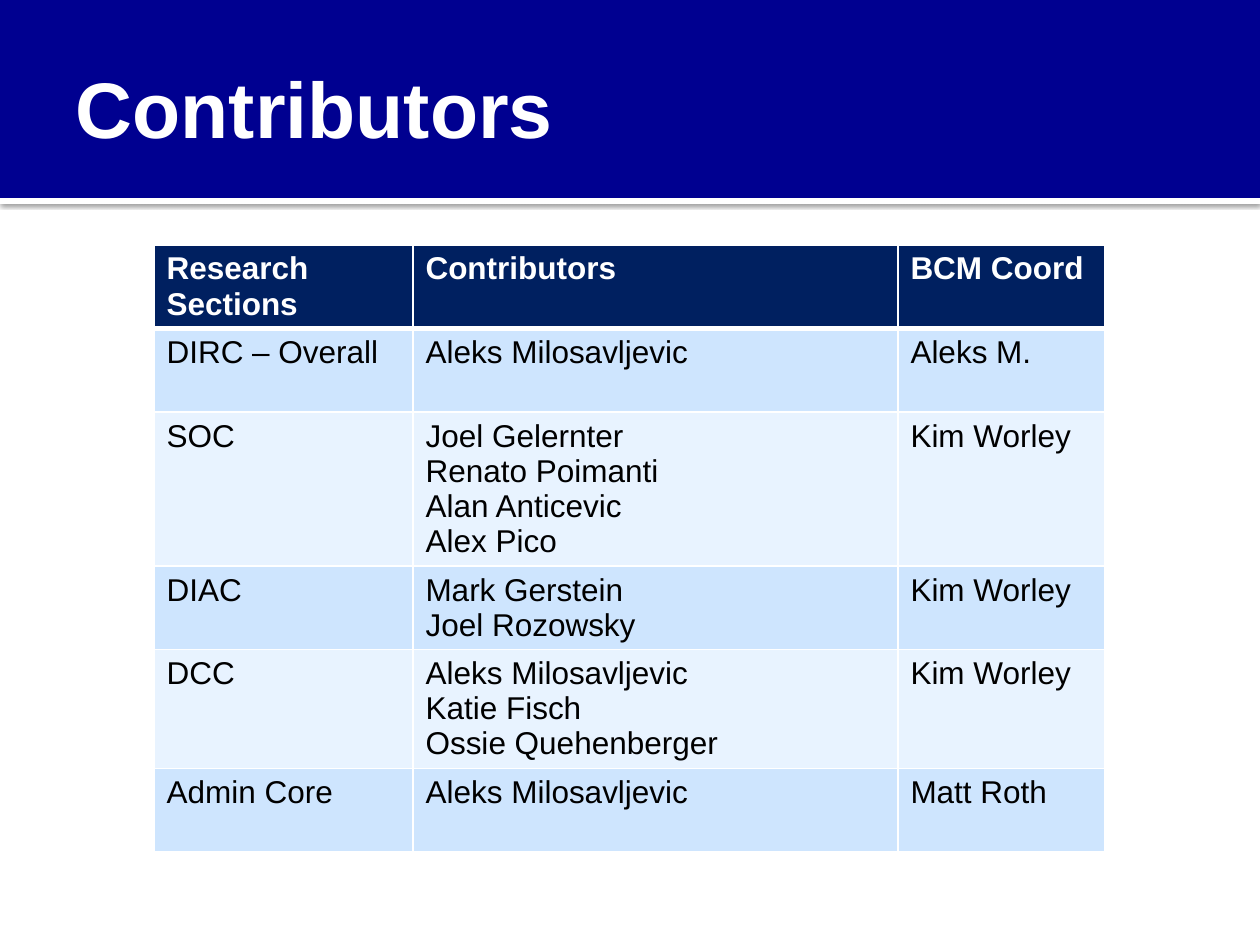
from lxml.etree import SubElement
from pptx import Presentation
from pptx.dml.color import RGBColor
from pptx.enum.shapes import MSO_SHAPE
from pptx.enum.text import MSO_ANCHOR, PP_ALIGN
from pptx.oxml.ns import qn
from pptx.util import Emu, Pt

PX_PER_INCH = 126
WHITE = RGBColor(0xFF, 0xFF, 0xFF)
BLACK = RGBColor(0, 0, 0)
BANNER_BLUE = RGBColor(0, 0, 0x90)
HEADER_NAVY = RGBColor(0, 0x20, 0x60)
BAND_BLUE = RGBColor(0xCE, 0xE5, 0xFE)
BAND_PALE = RGBColor(0xE8, 0xF3, 0xFF)

COLUMN_WIDTHS = [259, 485, 207]
ROW_HEIGHTS = [82, 84, 154, 83, 119, 83]
ROWS = [
    ("Research Sections", "Contributors", "BCM Coord"),
    ("DIRC – Overall", "Aleks Milosavljevic", "Aleks M."),
    ("SOC", "Joel Gelernter\nRenato Poimanti\nAlan Anticevic\nAlex Pico", "Kim Worley"),
    ("DIAC", "Mark Gerstein\nJoel Rozowsky", "Kim Worley"),
    ("DCC", "Aleks Milosavljevic\nKatie Fisch\nOssie Quehenberger", "Kim Worley"),
    ("Admin Core", "Aleks Milosavljevic", "Matt Roth"),
]


def px(length):
    """Turn whole pixels into EMU."""
    return Emu(round(length * 914400 / PX_PER_INCH))


def write_text(frame, text, size=18, color=BLACK, bold=False):
    """Fill a text frame, one paragraph per line."""
    frame.text = text
    for para in frame.paragraphs:
        para.alignment = PP_ALIGN.LEFT
        for span in para.runs:
            span.font.name = "Arial"
            span.font.size = Pt(size)
            span.font.bold = bold
            span.font.color.rgb = color


def add_bar(page, top, height, color):
    """Add a plain bar across the whole page."""
    bar = page.shapes.add_shape(MSO_SHAPE.RECTANGLE, 0, px(top), px(1260), px(height))
    bar.fill.solid()
    bar.fill.fore_color.rgb = color
    bar.line.fill.background()
    bar.shadow.inherit = False
    return bar


def add_drop_shadow(shape, blur, distance, opacity):
    """Give a shape a black shadow that falls straight down."""
    effects = shape.element.spPr.find(qn("a:effectLst"))
    shadow = SubElement(effects, qn("a:outerShdw"), blurRad=str(Pt(blur)),
                        dist=str(Pt(distance)), dir="5400000", rotWithShape="0")
    color = SubElement(shadow, qn("a:srgbClr"), val=str(BLACK))
    SubElement(color, qn("a:alpha"), val=str(opacity * 1000))


def format_title(page, text):
    """Place the title in front of the banner and write it."""
    title = page.shapes.title
    title.element.getparent().append(title.element)
    title.left, title.top, title.width, title.height = px(63), px(21), px(1134), px(173)
    frame = title.text_frame
    frame.margin_left = px(13)
    frame.margin_top = frame.margin_right = frame.margin_bottom = px(6)
    frame.vertical_anchor = MSO_ANCHOR.MIDDLE
    frame.word_wrap = True
    write_text(frame, text, size=45, color=WHITE, bold=True)


def add_border(cell, side, width):
    """Draw a white line on one side of a cell."""
    line = SubElement(cell._tc.get_or_add_tcPr(), qn(f"a:ln{side}"), w=str(Pt(width)))
    fill = SubElement(line, qn("a:solidFill"))
    SubElement(fill, qn("a:srgbClr"), val=str(WHITE))


def format_cell(cell, text, row):
    """Write a cell and style it as header or band."""
    header = row == 0
    write_text(cell.text_frame, text, color=WHITE if header else BLACK, bold=header)
    widths = {"L": 1, "R": 1, "T": 3 if row == 1 else 1, "B": 3 if header else 1}
    for side, width in widths.items():
        add_border(cell, side, width)
    cell.fill.solid()
    band = BAND_BLUE if row % 2 else BAND_PALE
    cell.fill.fore_color.rgb = HEADER_NAVY if header else band


def add_contributor_table(page, left, top):
    """Add the table of sections, contributors and coordinators."""
    frame = page.shapes.add_table(len(ROWS), len(COLUMN_WIDTHS), px(left), px(top),
                                  px(sum(COLUMN_WIDTHS)), px(sum(ROW_HEIGHTS)))
    table = frame.table
    for column, width in zip(table.columns, COLUMN_WIDTHS):
        column.width = px(width)
    for index, (row, height) in enumerate(zip(table.rows, ROW_HEIGHTS)):
        row.height = px(height)
        for cell, text in zip(row.cells, ROWS[index]):
            format_cell(cell, text, index)


def main():
    """Build and save the contributors slide."""
    deck = Presentation()
    deck.slide_width, deck.slide_height = px(1260), px(945)
    page = deck.slides.add_slide(deck.slide_layouts[5])
    page.background.fill.solid()
    page.background.fill.fore_color.rgb = WHITE
    stripe = add_bar(page, 198, 6, WHITE)
    add_drop_shadow(stripe, blur=2.5, distance=0.8, opacity=60)
    add_bar(page, 0, 198, BANNER_BLUE)
    format_title(page, "Contributors")
    add_contributor_table(page, 154, 245)
    deck.save("out.pptx")


if __name__ == "__main__":
    main()
